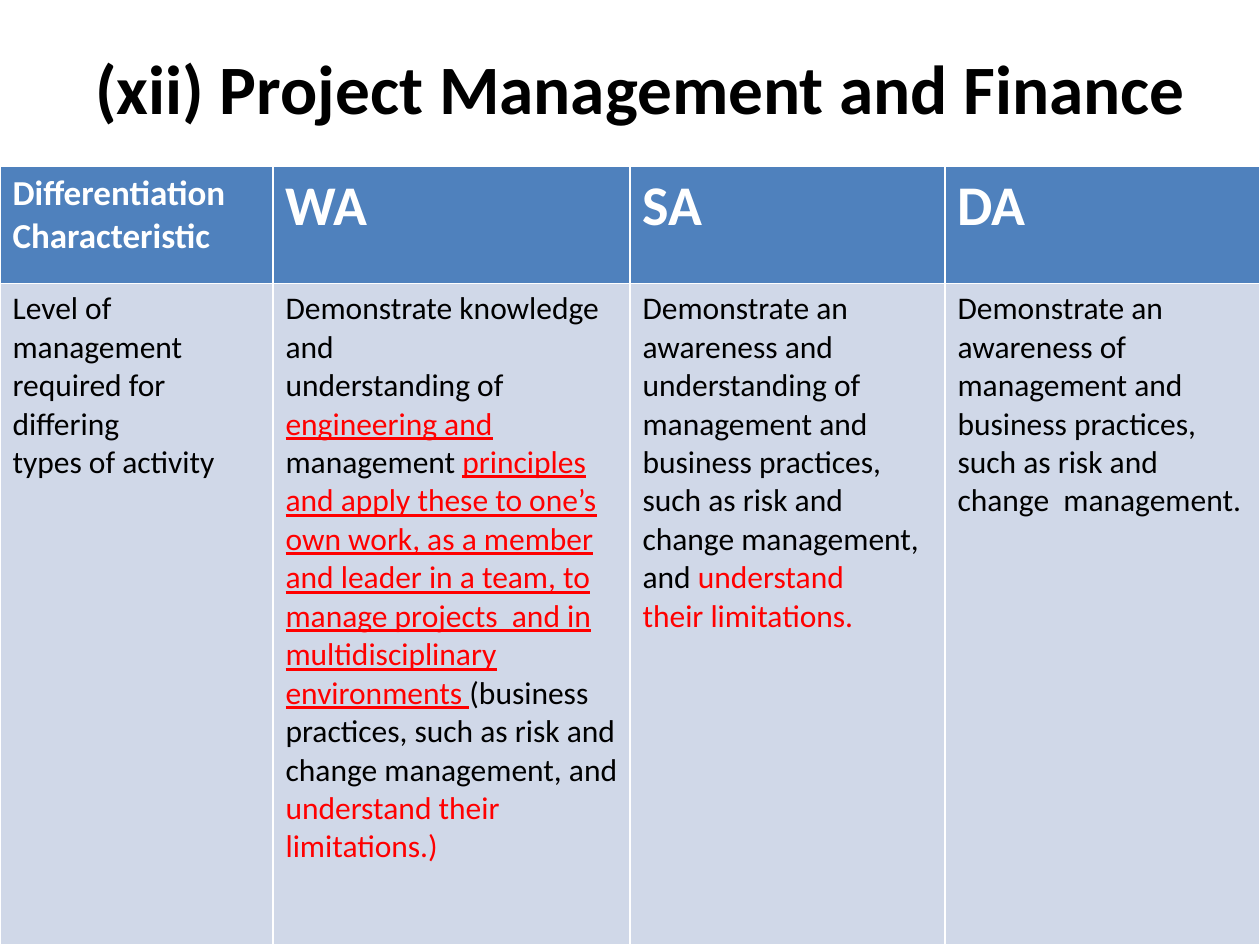
from pptx import Presentation
from pptx.dml.color import RGBColor
from pptx.enum import text
from pptx.util import Pt

COLORS = {
    "black": "000000",
    "white": "FFFFFF",
    "header": "4F81BD",
    "body": "D0D8E8",
    "change": "FF0000",
}

COLUMN_WIDTHS = [156, 204, 180, 180]
ROW_HEIGHTS = [67, 378]
HEADERS = [("Differentiation Characteristic", 20), ("WA", 32), ("SA", 32), ("DA", 32)]

PLAIN, RED, RED_LINE = ("black", False), ("change", False), ("change", True)
LEVELS = [
    [
        [("Level of management", PLAIN)],
        [("required for differing", PLAIN)],
        [("types of activity", PLAIN)],
    ],
    [
        [("Demonstrate knowledge and", PLAIN)],
        [
            ("understanding of ", PLAIN),
            ("engineering and", RED_LINE),
            (" management ", PLAIN),
            ("principles and apply these to one’s own work, as a member and leader "
             "in a team, to manage projects  and in multidisciplinary environments ", RED_LINE),
            ("(business practices, such as risk and change management, and ", PLAIN),
            ("understand their", RED),
        ],
        [("limitations.)", RED)],
    ],
    [
        [("Demonstrate an awareness and", PLAIN)],
        [("understanding of management and", PLAIN)],
        [("business practices, such as risk and", PLAIN)],
        [("change management, and ", PLAIN), ("understand", RED)],
        [("their limitations.", RED)],
    ],
    [
        [("Demonstrate an awareness of", PLAIN)],
        [("management and business practices,", PLAIN)],
        [("such as risk and change  management.", PLAIN)],
    ],
]


class SlideBuilder:
    font_name = "Calibri"

    def __init__(self, slide):
        self.slide = slide

    def color(self, name):
        return RGBColor.from_string(COLORS[name])

    def style(self, font, size, bold, color=None):
        font.name = self.font_name
        font.size = Pt(size)
        font.bold = bold
        if color:
            font.color.rgb = self.color(color)

    def title(self, wording, left, top, width, height):
        title = self.slide.shapes.title
        title.left, title.top = Pt(left), Pt(top)
        title.width, title.height = Pt(width), Pt(height)
        frame = title.text_frame
        frame.text = wording
        frame.vertical_anchor = text.MSO_ANCHOR.MIDDLE
        paragraph = frame.paragraphs[0]
        paragraph.alignment = text.PP_ALIGN.CENTER
        self.style(paragraph.font, 39.6, True, "black")

    def table(self, left, top, widths, heights):
        table = self.slide.shapes.add_table(
            len(heights), len(widths), Pt(left), Pt(top), Pt(sum(widths)), Pt(sum(heights))
        ).table
        for column, width in zip(table.columns, widths):
            column.width = Pt(width)
        for row, height in zip(table.rows, heights):
            row.height = Pt(height)
        return table

    def fill(self, cell, color):
        cell.fill.solid()
        cell.fill.fore_color.rgb = self.color(color)

    def header_cell(self, cell, wording, size):
        self.fill(cell, "header")
        cell.text = wording
        self.style(cell.text_frame.paragraphs[0].font, size, True, "white")

    def body_cell(self, cell, lines):
        self.fill(cell, "body")
        frame = cell.text_frame
        for index, line in enumerate(lines):
            paragraph = frame.add_paragraph() if index else frame.paragraphs[0]
            self.style(paragraph.font, 18, False)
            for wording, (color, underline) in line:
                run = paragraph.add_run()
                run.text = wording
                run.font.color.rgb = self.color(color)
                if underline:
                    run.font.underline = True


def main():
    presentation = Presentation()
    presentation.slide_width, presentation.slide_height = Pt(720), Pt(540)
    builder = SlideBuilder(presentation.slides.add_slide(presentation.slide_layouts[5]))
    builder.title("(xii) Project Management and Finance", 24, 16.5, 684, 66)
    table = builder.table(0, 95, COLUMN_WIDTHS, ROW_HEIGHTS)
    for column, ((heading, size), lines) in enumerate(zip(HEADERS, LEVELS)):
        builder.header_cell(table.cell(0, column), heading, size)
        builder.body_cell(table.cell(1, column), lines)
    presentation.save("out.pptx")


if __name__ == "__main__":
    main()
